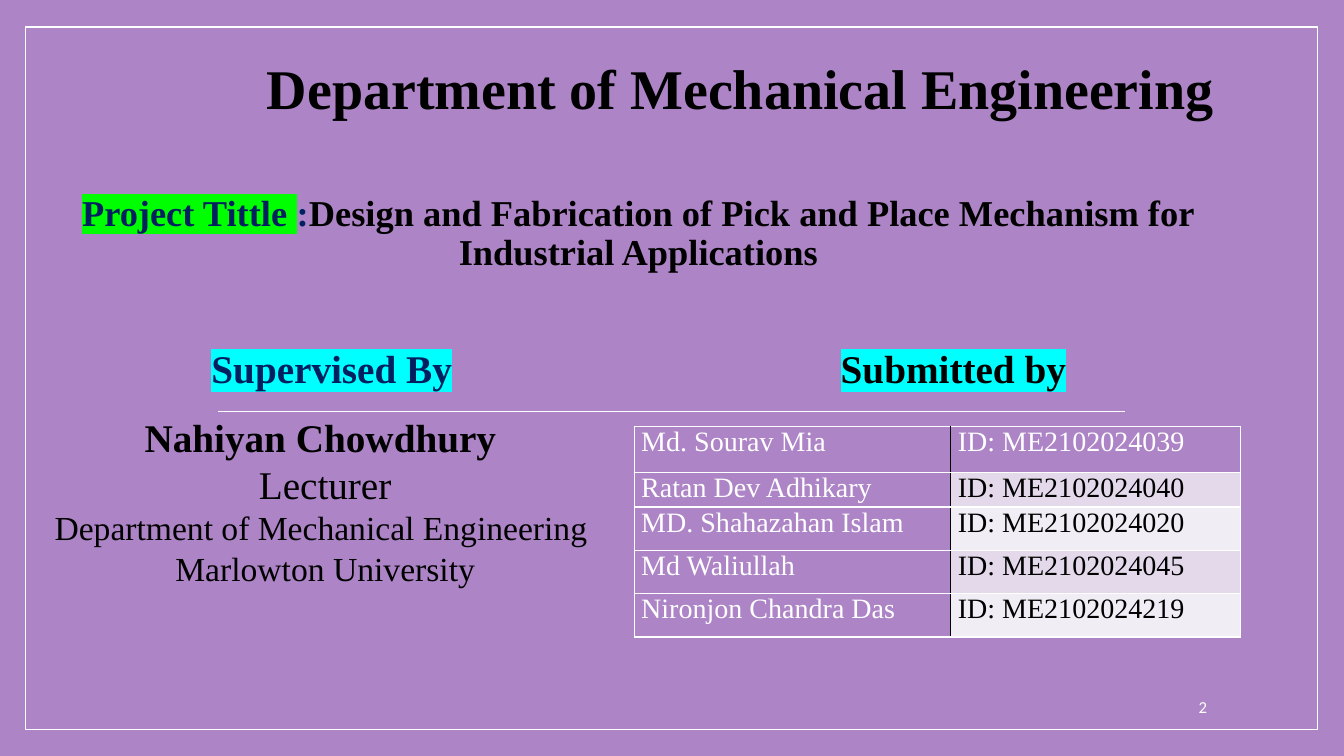
from lxml import etree
from pptx import Presentation
from pptx.dml.color import RGBColor
from pptx.enum.shapes import MSO_CONNECTOR, MSO_SHAPE
from pptx.enum.text import MSO_ANCHOR, PP_ALIGN
from pptx.oxml.ns import qn
from pptx.util import Pt

PX = 9144  # 100 px to the inch
LEFT, MID, RIGHT, JUST = PP_ALIGN.LEFT, PP_ALIGN.CENTER, PP_ALIGN.RIGHT, PP_ALIGN.JUSTIFY
TOP, CENTRE, BASE = MSO_ANCHOR.TOP, MSO_ANCHOR.MIDDLE, MSO_ANCHOR.BOTTOM
RECT, LINE = MSO_SHAPE.RECTANGLE, MSO_CONNECTOR.STRAIGHT

SERIF = "Times New Roman"
PURPLE, WHITE, BLACK, NAVY = "AD84C6", "FFFFFF", "000000", "002060"
CYAN, GREEN = "00FFFF", "00FF00"
BANDS = [PURPLE, "E3D9EA", "F1EDF5"]

STUDENTS = [
    ("Md. Sourav Mia", "ID: ME2102024039"),
    ("Ratan Dev Adhikary", "ID: ME2102024040"),
    ("MD. Shahazahan Islam", "ID: ME2102024020"),
    ("Md Waliullah", "ID: ME2102024045"),
    ("Nironjon Chandra Das", "ID: ME2102024219"),
]


def px(*nums):
    return [n * PX for n in nums]


def paint(color, code):
    color.rgb = RGBColor.from_string(code)


def fill(item, code):
    item.fill.solid()
    paint(item.fill.fore_color, code)


def add_fill(parent, tag, code):
    node = etree.SubElement(parent, qn(tag))
    etree.SubElement(node, qn("a:srgbClr"), val=code)
    return node


def write(para, text, size=28, color=BLACK, bold=False, font=SERIF, mark=None):
    """Add a run; mark is its highlight colour."""
    run = para.add_run()
    run.text = text
    run.font.size, run.font.bold, run.font.name = Pt(size), bold, font
    paint(run.font.color, color)
    if mark:
        props = run.font._element
        props.find(qn("a:solidFill")).addnext(add_fill(props, "a:highlight", mark))


def text_box(slide, box, lines, align=MID, anchor=TOP, space=None, pad=10):
    """Each line is a list of (text, format) runs; pad is the side inset."""
    frame = slide.shapes.add_textbox(*px(*box)).text_frame
    frame.word_wrap = True
    frame.vertical_anchor = anchor
    frame.margin_left = frame.margin_right = pad * PX
    for i, runs in enumerate(lines):
        para = frame.add_paragraph() if i else frame.paragraphs[0]
        para.alignment = align
        if space:
            para.line_spacing = space
        for text, form in runs:
            write(para, text, **form)


def backdrop(slide, box):
    x, y, wide, high = box
    fill(slide.background, PURPLE)
    frame = slide.shapes.add_shape(RECT, *px(x + 25, y + 27, wide - 51, high - 53))
    frame.shadow.inherit = False
    fill(frame, PURPLE)
    paint(frame.line.color, WHITE)
    frame.line.width = Pt(1)
    rule = slide.shapes.add_connector(LINE, *px(x + 216, y + 408, x + 1116, y + 408))
    paint(rule.line.color, WHITE)
    rule.line.width = Pt(0.79)
    etree.SubElement(rule._element.spPr, qn("a:effectLst"))


def header(slide, box):
    x, y, wide, high = box
    text_box(slide, (x + 288, y, 990, 77), [[
        ("Department of Mechanical Engineering", dict(size=40, bold=True))]], LEFT)
    form = dict(size=26, bold=True)
    text_box(slide, (x, y + high - 105, wide, 105), [[
        ("Project Tittle ", dict(form, color=NAVY, mark=GREEN)),
        (":", dict(form, color=NAVY)),
        ("Design and Fabrication of Pick and Place Mechanism for Industrial Applications", form),
    ]], anchor=BASE, space=0.9, pad=80)


def tutor(slide, box):
    x, y, wide, high = box
    text_box(slide, (x + 153, y, 266, 57), [[
        ("Supervised By", dict(color=NAVY, bold=True, mark=CYAN))]])
    text_box(slide, (x, y + 68, wide, high - 68), [
        [("Nahiyan Chowdhury ", dict(bold=True))],
        [("Lecturer", {})],
        [("Department of Mechanical Engineering ", dict(size=24))],
        [("Marlowton University", dict(size=24))],
    ])


def edge(cell, side, code, width):
    props = cell._tc.get_or_add_tcPr()
    line = etree.SubElement(props, qn("a:ln" + side), w=str(Pt(width)))
    add_fill(line, "a:solidFill", code)


def team(slide, box):
    x, y, wide, high = box
    text_box(slide, (x + 191, y, 251, 57), [[
        ("Submitted by", dict(bold=True, mark=CYAN))]])
    grid = slide.shapes.add_table(
        len(STUDENTS), 2, *px(x, y + 86, wide, high - 86)).table
    grid.first_row = grid.horz_banding = False
    for col, width in zip(grid.columns, (314, 287)):
        col.width = width * PX
    for r, names in enumerate(STUDENTS):
        grid.rows[r].height = (46, 34, 43, 43, 43)[r] * PX
        for c, name in enumerate(names):
            cell = grid.cell(r, c)
            cell.margin_left = cell.margin_right = 7 * PX
            cell.margin_top = cell.margin_bottom = 0
            edge(cell, "L", BLACK if c else WHITE, 1)
            edge(cell, "R", WHITE if c else BLACK, 1)
            edge(cell, "T", WHITE, 1)
            edge(cell, "B", WHITE, 1)
            shaded = r > 0 and c > 0
            fill(cell, BANDS[2 - r % 2] if shaded else BANDS[0])
            para = cell.text_frame.paragraphs[0]
            para.alignment = JUST
            write(para, name, size=20, color=BLACK if shaded else WHITE)


def main():
    deck = Presentation()
    deck.slide_width, deck.slide_height = px(1333, 750)
    slide = deck.slides.add_slide(deck.slide_layouts[6])
    backdrop(slide, (0, 0, 1333, 750))
    header(slide, (-33, 48, 1333, 228))
    tutor(slide, (43, 337, 559, 253))
    team(slide, (629, 337, 601, 295))
    text_box(slide, (1020, 681, 187, 40), [[
        ("2", dict(size=12, color=WHITE, font="Calibri"))]], RIGHT, CENTRE)
    deck.save("out.pptx")


if __name__ == "__main__":
    main()
